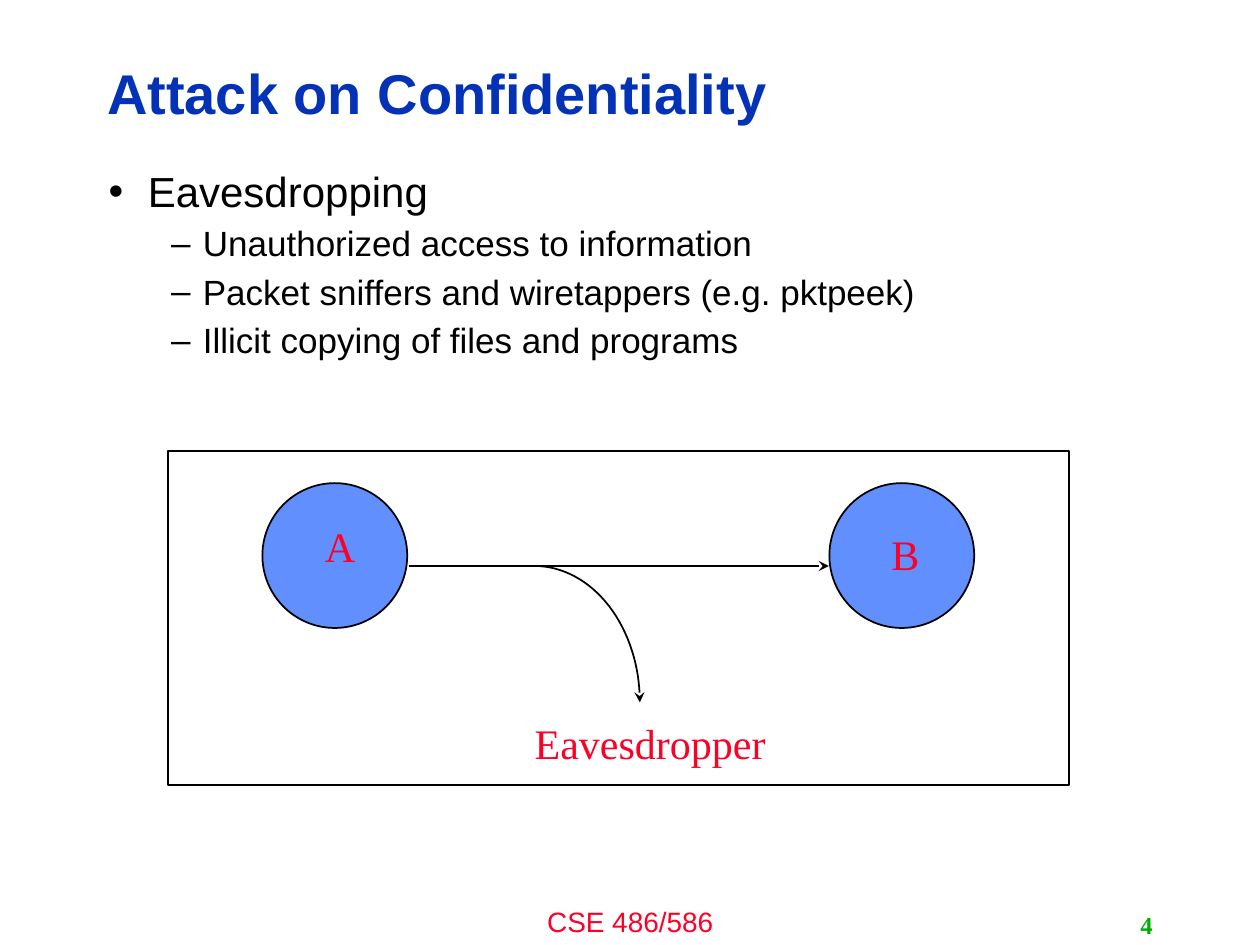
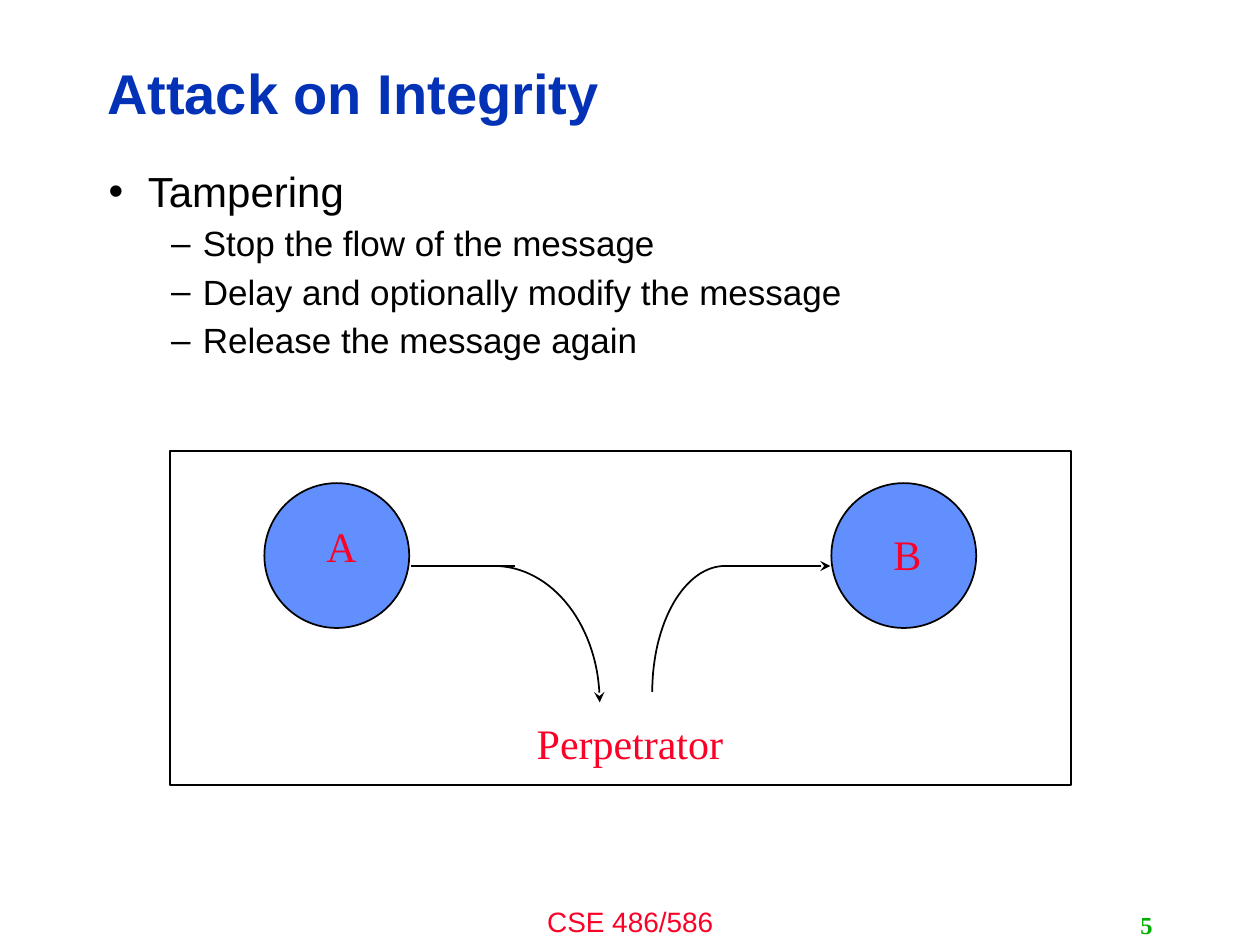
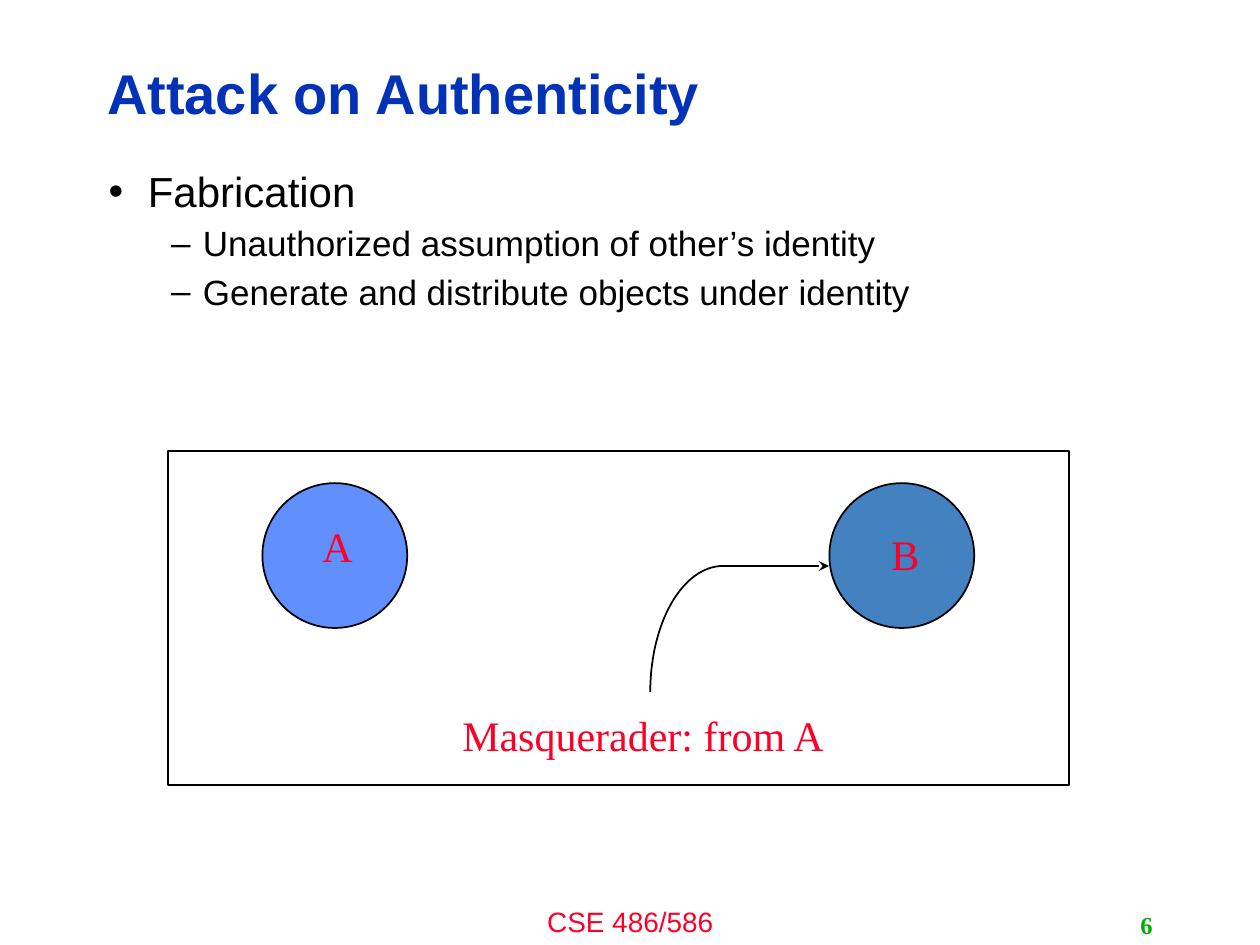
"""Build three slides on attacks against confidentiality, integrity and authenticity."""
import dataclasses
import math
import typing

import lxml.etree
import pptx
import pptx.dml.color
import pptx.enum.dml
import pptx.enum.shapes
import pptx.enum.text
import pptx.oxml.ns
import pptx.util

Cm = pptx.util.Cm
Pt = pptx.util.Pt
Align = pptx.enum.text.PP_ALIGN
Anchor = pptx.enum.text.MSO_ANCHOR
Fit = pptx.enum.text.MSO_AUTO_SIZE
Preset = pptx.enum.shapes.MSO_SHAPE

COLORS = {
    "title": "0332B7",
    "text": "000000",
    "accent": "FC0128",
    "number": "00AE00",
    "panel": "FFFFFF",
    "party": "618FFD",
    "deceived": "4381C0",
}
FONTS = {
    "title": {"name": "Arial", "size": Pt(32), "bold": True},
    "topic": {"name": "Arial", "size": Pt(24)},
    "detail": {"name": "Arial", "size": Pt(20)},
    "footer": {"name": "Arial", "size": Pt(16)},
    "number": {"name": "Times New Roman", "size": Pt(14), "bold": True},
    "label": {"name": "Times New Roman", "size": Pt(24)},
}
FREE_LABEL = {"word_wrap": False, "auto_size": Fit.SHAPE_TO_FIT_TEXT}
PANEL_TOP, PANEL_WIDTH, PANEL_HEIGHT = 9.1, 18.16, 6.73
PARTY_TOP, PARTY_SIZE = 9.74, 2.92
SENDER_X, RECEIVER_X = 1.9, 13.33
MESSAGE_Y = 11.41
CURVE_STEPS = 32


class Box(typing.NamedTuple):
    """Hold a position and size in centimetres."""
    left: float
    top: float
    width: float
    height: float


class Message(typing.NamedTuple):
    """Hold a straight message path, measured from the panel's left."""
    start: float
    end: float
    arrow: bool


class Curve(typing.NamedTuple):
    """Hold a quarter ellipse that leaves or joins the message path."""
    left: float
    width: float
    height: float
    leaving: bool


LEAVING = {"width": 2.13, "height": 2.75, "leaving": True}
JOINING = Curve(9.72, 1.47, 2.54, False)


@dataclasses.dataclass(frozen=True)
class Attack:
    """Describe one attack slide."""
    number: int
    goal: str
    topic: str
    details: tuple[str, ...]
    attacker: str
    attacker_box: Box
    messages: tuple[Message, ...]
    curves: tuple[Curve, ...]
    sender_label_x: float
    panel_left: float = 3.39
    receiver_color: str = "party"
    attacker_format: dict = dataclasses.field(default_factory=lambda: FREE_LABEL)


ATTACKS = (
    Attack(4, "Confidentiality", "Eavesdropping",
           ("Unauthorized access to information",
            "Packet sniffers and wiretappers (e.g. pktpeek)",
            "Illicit copying of files and programs"),
           "Eavesdropper", Box(10.53, 14.33, 5.16, 1.27),
           (Message(4.85, 13.32, True),), (Curve(7.38, **LEAVING),), 2.91),
    Attack(5, "Integrity", "Tampering",
           ("Stop the flow of the message",
            "Delay and optionally modify the message",
            "Release the message again"),
           "Perpetrator", Box(10.57, 14.33, 4.27, 1.27),
           (Message(4.85, 6.96, False), Message(11.19, 13.31, True)),
           (Curve(6.53, **LEAVING), JOINING), 2.9, panel_left=3.43),
    Attack(6, "Authenticity", "Fabrication",
           ("Unauthorized assumption of other’s identity",
            "Generate and distribute objects under identity"),
           "Masquerader: from A", Box(9.07, 14.17, 9.53, 1.3),
           (Message(11.19, 13.32, True),), (JOINING,), 2.86,
           receiver_color="deceived",
           attacker_format={"word_wrap": True, "auto_size": Fit.SHAPE_TO_FIT_TEXT}),
)


def apply(target: typing.Any, values: dict) -> None:
    """Set each named format value on the target."""
    for name, value in values.items():
        setattr(target, name, value)


def rgb(color: str) -> pptx.dml.color.RGBColor:
    """Return the named colour."""
    return pptx.dml.color.RGBColor.from_string(COLORS[color])


def add_xml(parent: typing.Any, tag: str, **attributes: str) -> typing.Any:
    """Append a drawing element to its parent."""
    return lxml.etree.SubElement(parent, pptx.oxml.ns.qn(tag), attributes)


def write(paragraph: typing.Any, text: str, font: str, color: str,
          before: int = 0, **formats: typing.Any) -> None:
    """Write one formatted run, with spacing before in percent of a line."""
    apply(paragraph, formats)
    run = paragraph.add_run()
    run.text = text
    apply(run.font, FONTS[font])
    run.font.color.rgb = rgb(color)
    if before:
        spacing = add_xml(paragraph._p.get_or_add_pPr(), "a:spcBef")
        add_xml(spacing, "a:spcPct", val=str(before * 1000))


def add_frame(slide: typing.Any, box: Box, **formats: typing.Any) -> typing.Any:
    """Add a text box and return its text frame."""
    frame = slide.shapes.add_textbox(*map(Cm, box)).text_frame
    apply(frame, {"word_wrap": True} | formats)
    return frame


def add_bullet(paragraph: typing.Any, mark: str, margin: float, hang: float) -> None:
    """Give a paragraph a hanging bullet."""
    properties = paragraph._p.get_or_add_pPr()
    properties.set("marL", str(Cm(margin)))
    properties.set("indent", str(-Cm(hang)))
    add_xml(properties, "a:buFont", typeface="Arial")
    add_xml(properties, "a:buChar", char=mark)


def add_body(slide: typing.Any, attack: Attack) -> None:
    """Write the topic and its details."""
    frame = add_frame(slide, Box(1.94, 3.32, 21.34, 13.69))
    topic = frame.paragraphs[0]
    write(topic, attack.topic, "topic", "text", 30, line_spacing=0.9)
    add_bullet(topic, "•", 0.79, 0.79)
    for text in attack.details:
        detail = frame.add_paragraph()
        write(detail, text, "detail", "text", 30, line_spacing=0.9, level=1)
        add_bullet(detail, "–", 1.9, 0.64)


def add_outline(shape: typing.Any, arrow: bool = False) -> None:
    """Draw a thin dark line, with an arrowhead if asked."""
    shape.line.color.rgb = rgb("text")
    shape.line.width = Pt(1)
    if arrow:
        add_xml(shape.element.spPr.get_or_add_ln(), "a:tailEnd", type="stealth")


def add_area(slide: typing.Any, preset: typing.Any, box: Box, color: str) -> None:
    """Add a filled, outlined shape."""
    area = slide.shapes.add_shape(preset, *map(Cm, box))
    area.shadow.inherit = False
    area.fill.solid()
    area.fill.fore_color.rgb = rgb(color)
    add_outline(area)


def add_message(slide: typing.Any, message: Message, origin: float) -> None:
    """Draw a straight message path."""
    route = slide.shapes.add_connector(
        pptx.enum.shapes.MSO_CONNECTOR.STRAIGHT,
        Cm(origin + message.start), Cm(MESSAGE_Y),
        Cm(origin + message.end), Cm(MESSAGE_Y))
    add_outline(route, message.arrow)
    add_xml(route.element.spPr, "a:effectLst")


def add_curve(slide: typing.Any, curve: Curve, origin: float) -> None:
    """Draw a quarter ellipse to or from the attacker."""
    points = []
    for step in range(CURVE_STEPS + 1):
        angle = math.pi / 2 * step / CURVE_STEPS
        across, down = 1 - math.cos(angle), 1 - math.sin(angle)
        if curve.leaving:
            across, down = math.sin(angle), 1 - math.cos(angle)
        points.append((Cm(origin + curve.left + curve.width * across),
                       Cm(MESSAGE_Y + curve.height * down)))
    builder = slide.shapes.build_freeform(*points[0])
    builder.add_line_segments(points[1:], close=False)
    detour = builder.convert_to_shape()
    detour.shadow.inherit = False
    detour.fill.background()
    add_outline(detour, curve.leaving)


def add_label(slide: typing.Any, text: str, box: Box, formats: dict) -> None:
    """Name a party in the diagram."""
    frame = add_frame(slide, box, **formats)
    write(frame.paragraphs[0], text, "label", "accent", 50)


def add_diagram(slide: typing.Any, attack: Attack) -> None:
    """Draw the parties and the paths between them."""
    origin = attack.panel_left
    add_area(slide, Preset.RECTANGLE,
             Box(origin, PANEL_TOP, PANEL_WIDTH, PANEL_HEIGHT), "panel")
    for left, color in ((SENDER_X, "party"), (RECEIVER_X, attack.receiver_color)):
        add_area(slide, Preset.OVAL,
                 Box(origin + left, PARTY_TOP, PARTY_SIZE, PARTY_SIZE), color)
    for message in attack.messages:
        add_message(slide, message, origin)
    for curve in attack.curves:
        add_curve(slide, curve, origin)
    add_label(slide, "A", Box(origin + attack.sender_label_x, 10.36, 1.12, 1.27), FREE_LABEL)
    add_label(slide, "B", Box(origin + 14.33, 10.52, 1.07, 1.27), FREE_LABEL)
    add_label(slide, attack.attacker, attack.attacker_box, attack.attacker_format)


def add_attack(deck: typing.Any, attack: Attack) -> None:
    """Add one complete slide."""
    slide = deck.slides.add_slide(deck.slide_layouts[6])
    footer = add_frame(slide, Box(8.47, 18.1, 8.47, 0.94), auto_size=Fit.SHAPE_TO_FIT_TEXT)
    write(footer.paragraphs[0], "CSE 486/586", "footer", "accent", 50, alignment=Align.CENTER)
    title = add_frame(slide, Box(1.91, 0.91, 20.27, 2.06), vertical_anchor=Anchor.MIDDLE)
    write(title.paragraphs[0], f"Attack on {attack.goal}", "title", "title", line_spacing=0.9)
    add_body(slide, attack)
    number = add_frame(slide, Box(18.21, 18.24, 5.28, 0.81),
                       vertical_anchor=Anchor.MIDDLE, word_wrap=False)
    write(number.paragraphs[0], str(attack.number), "number", "number", alignment=Align.RIGHT)
    add_diagram(slide, attack)


def main() -> None:
    """Build and save the deck."""
    deck = pptx.Presentation()
    apply(deck, {"slide_width": Cm(25.4), "slide_height": Cm(19.05)})
    for attack in ATTACKS:
        add_attack(deck, attack)
    deck.save("out.pptx")


if __name__ == "__main__":
    main()
